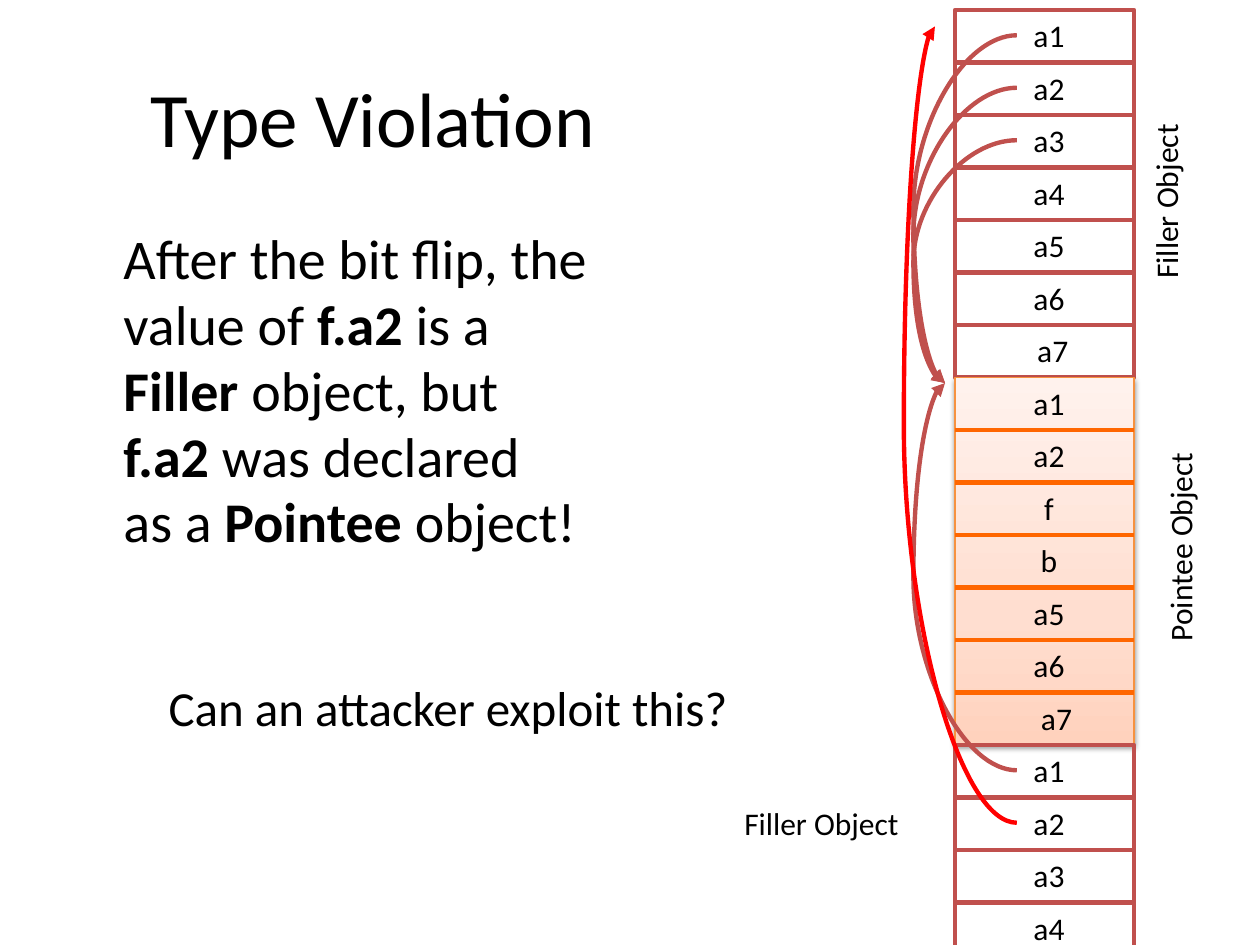
from lxml import etree
from pptx import Presentation
from pptx import util as u
from pptx.dml.color import RGBColor
from pptx.enum import shapes, text
from pptx.oxml import ns

BLACK = RGBColor(0x00, 0x00, 0x00)
BRICK = RGBColor(0xC0, 0x50, 0x4D)
ORANGE = RGBColor(0xFF, 0x66, 0x00)
AMBER = RGBColor(0xF6, 0x92, 0x40)
RED = RGBColor(0xFF, 0x00, 0x00)
PEACH_STOPS = {0: RGBColor(0xFF, 0xD2, 0xBD), 35: RGBColor(0xFF, 0xDE, 0xD0),
               100: RGBColor(0xFF, 0xF2, 0xED)}

ROW = 5 / 12
BLOCK_ROWS = 7
BLOCK_LEFT, BLOCK_WIDTH = 7.58, 1.42
BLOCK_TOPS = [0.08 + index * BLOCK_ROWS * ROW for index in range(3)]
LABEL_LEFT, LABEL_WIDTH, LABEL_HEIGHT = 8.07, 0.51, 0.4


def add_element(parent, tag, **attributes):
    return etree.SubElement(parent, ns.qn(tag), attributes)


class SlideBuilder:
    font_name = "Calibri"
    line_width = 2.5

    def __init__(self, slide):
        self.slide = slide

    def place(self, shape, left, top, width, height):
        box = {"left": left, "top": top, "width": width, "height": height}
        for name, value in box.items():
            setattr(shape, name, u.Inches(value))

    def run(self, paragraph, words, size, bold=False):
        run = paragraph.add_run()
        run.text = words
        formats = {"name": self.font_name, "size": u.Pt(size), "bold": bold}
        for name, value in formats.items():
            setattr(run.font, name, value)
        run.font.color.rgb = BLACK

    def title(self, words, *box):
        shape = self.slide.shapes.title
        self.place(shape, *box)
        self.run(shape.text_frame.paragraphs[0], words, 44)

    def body(self, lines, *box):
        """Fill the body; every second piece of a line is bold."""
        shape = self.slide.placeholders[1]
        self.place(shape, *box)
        frame = shape.text_frame
        for index, pieces in enumerate(lines):
            paragraph = frame.add_paragraph() if index else frame.paragraphs[0]
            paragraph.space_before = u.Pt(0)
            paragraph.line_spacing = 0.98
            properties = paragraph._p.get_or_add_pPr()
            properties.set("marL", str(u.Inches(0.38)))
            properties.set("indent", "0")
            add_element(properties, "a:buNone")
            for position, piece in enumerate(pieces):
                if piece:
                    self.run(paragraph, piece, 32, bold=position % 2 == 1)

    def label(self, words, left, top, width, height=LABEL_HEIGHT, size=18, rotation=0):
        shape = self.slide.shapes.add_textbox(
            *map(u.Inches, (left, top, width, height)))
        shape.rotation = rotation
        frame = shape.text_frame
        formats = {"word_wrap": False, "auto_size": text.MSO_AUTO_SIZE.SHAPE_TO_FIT_TEXT}
        for name, value in formats.items():
            setattr(frame, name, value)
        paragraph = frame.paragraphs[0]
        paragraph.alignment = text.PP_ALIGN.CENTER
        self.run(paragraph, words, size)

    def connector(self, kind, start, end, color):
        connector = self.slide.shapes.add_connector(
            kind, *map(u.Inches, (*start, *end)))
        connector.line.color.rgb = color
        connector.line.width = u.Pt(self.line_width)
        add_element(connector._element.spPr, "a:effectLst")
        return connector

    def pointer(self, start, end, color, bulge):
        """Curved arrow, built from end to start and then turned by 180 degrees."""
        connector = self.connector(shapes.MSO_CONNECTOR.CURVE, end, start, color)
        properties = connector._element.spPr
        properties.find(ns.qn("a:xfrm")).set("rot", "10800000")
        geometry = properties.find(ns.qn("a:prstGeom"))
        adjustments = geometry.find(ns.qn("a:avLst"))
        if adjustments is None:
            adjustments = add_element(geometry, "a:avLst")
        add_element(adjustments, "a:gd", name="adj1", fmla=f"val {round(bulge * 100000)}")
        add_element(properties.find(ns.qn("a:ln")), "a:tailEnd", type="triangle")

    def rectangle(self, top, color, width):
        shape = self.slide.shapes.add_shape(
            shapes.MSO_SHAPE.RECTANGLE,
            *map(u.Inches, (BLOCK_LEFT, top, BLOCK_WIDTH, BLOCK_ROWS * ROW)))
        shape.shadow.inherit = False
        shape.fill.background()
        shape.line.color.rgb = color
        shape.line.width = u.Pt(width)
        return shape

    def highlight(self, shape):
        """Give the rectangle a peach gradient and a soft shadow below it."""
        shape.fill.gradient()
        shape.fill.gradient_angle = 90
        properties = shape._element.spPr
        stops = properties.find(ns.qn("a:gradFill")).find(ns.qn("a:gsLst"))
        for stop in list(stops):
            stops.remove(stop)
        for position, color in PEACH_STOPS.items():
            stop = add_element(stops, "a:gs", pos=str(position * 1000))
            add_element(stop, "a:srgbClr", val=str(color))
        shadow = add_element(properties.find(ns.qn("a:effectLst")), "a:outerShdw",
                             blurRad="40000", dist="20000", dir="5400000", rotWithShape="0")
        shadow_color = add_element(shadow, "a:srgbClr", val=str(BLACK))
        add_element(shadow_color, "a:alpha", val="38000")

    def memory_block(self, top, fields, color, last_shift=0.0, highlighted=False):
        """Rectangle cut into rows, with one field name in each row."""
        if highlighted:
            self.highlight(self.rectangle(top, AMBER, 0.75))
        else:
            self.rectangle(top, color, self.line_width)
        for index in range(1, len(fields)):
            y = top + index * ROW
            self.connector(shapes.MSO_CONNECTOR.STRAIGHT, (BLOCK_LEFT, y),
                           (BLOCK_LEFT + BLOCK_WIDTH, y), color)
        for index, field in enumerate(fields):
            shift = last_shift if index == BLOCK_ROWS - 1 else 0
            self.label(field, LABEL_LEFT + shift, top + index * ROW, LABEL_WIDTH)


def main():
    presentation = Presentation()
    presentation.slide_width = u.Inches(10)
    presentation.slide_height = u.Inches(7.5)
    builder = SlideBuilder(presentation.slides.add_slide(presentation.slide_layouts[1]))

    builder.title("Type Violation", 0.5, 0.3, 4.92, 1.25)
    builder.body([
        ["After the bit flip, the"],
        ["value of ", "f.a2", " is a"],
        ["", "Filler", " object, but"],
        ["", "f.a2", " was declared"],
        ["as a ", "Pointee", " object!"],
    ], 0.5, 1.75, 9, 4.95)

    filler_fields = [f"a{number}" for number in range(1, BLOCK_ROWS + 1)]
    pointee_fields = ["a1", "a2", "f", "b", "a5", "a6", "a7"]
    first_top, pointee_top, last_top = BLOCK_TOPS

    builder.memory_block(first_top, filler_fields, BRICK, last_shift=0.03)
    builder.label("Filler Object", 8.39, 1.4, 1.72, rotation=270)
    builder.memory_block(pointee_top, pointee_fields, ORANGE, last_shift=0.06,
                         highlighted=True)
    builder.label("Pointee Object", 8.35, 4.14, 2.03, rotation=270)
    builder.memory_block(last_top, filler_fields[:4], BRICK)
    builder.label("Filler Object", 5.66, 6.33, 1.72)

    half_label = LABEL_HEIGHT / 2
    first_rows = [first_top + index * ROW for index in range(3)]
    for row_top in [*first_rows, last_top]:
        builder.pointer((LABEL_LEFT, row_top + half_label), (7.5, 3.04), BRICK, 1.44)
    builder.pointer((LABEL_LEFT, last_top + ROW + half_label), (7.42, 0.21), RED, 1.38)

    builder.label("Can an attacker exploit this?", 1.21, 5.33, 4.69, 0.57, size=28)
    presentation.save("out.pptx")


if __name__ == "__main__":
    main()
